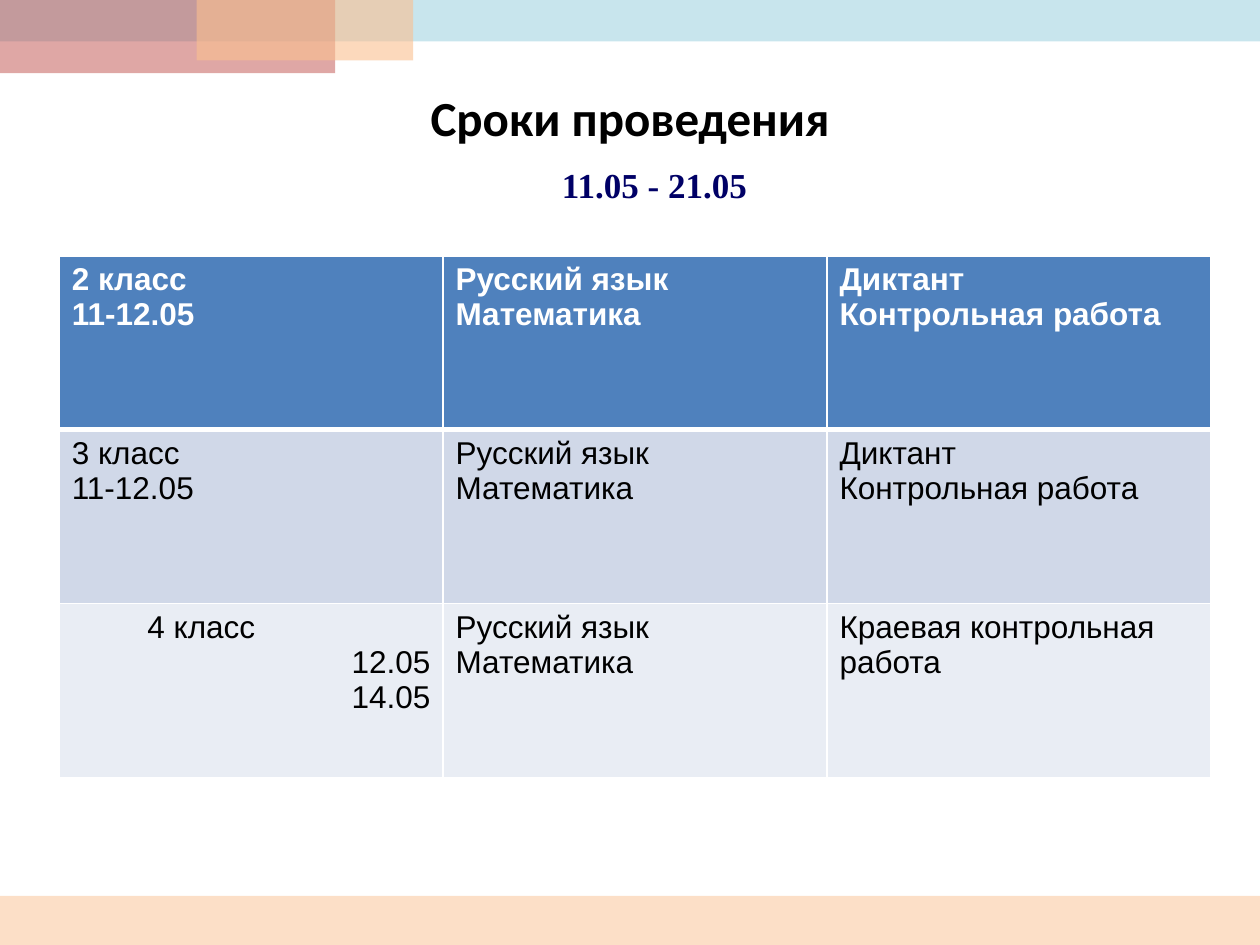
from lxml.etree import SubElement
from pptx import Presentation
from pptx.dml.color import RGBColor
from pptx.enum.shapes import MSO_SHAPE as Shape
from pptx.enum.text import MSO_ANCHOR as Anchor, PP_ALIGN as Align
from pptx.oxml.ns import qn
from pptx.util import Inches, Pt

COLORS = {
    "peach": "FAC090", "aqua": "93CDDD", "red": "C0504D",
    "black": "000000", "navy": "000066", "white": "FFFFFF",
    "header": "4F81BD", "odd": "D0D8E8", "even": "E9EDF4",
}
COLUMNS, ROWS = 100, 75

SUBJECTS = ["Русский язык", "Математика"]
WORKS = ["Диктант", "Контрольная работа"]
SCHEDULE = [
    [["2 класс", "11-12.05"], SUBJECTS, WORKS],
    [["3 класс", "11-12.05"], SUBJECTS, WORKS],
    [["4 класс", "12.05", "14.05"], SUBJECTS, ["Краевая контрольная работа"]],
]


def rgb(name):
    return RGBColor.from_string(COLORS[name])


class ScheduleSlide:
    """Draws on one slide; boxes are (left, top, width, height) in grid units."""

    def __init__(self, deck):
        self.slide = deck.slides.add_slide(deck.slide_layouts[6])
        self.column = deck.slide_width / COLUMNS
        self.row = deck.slide_height / ROWS

    def place(self, left, top, width, height):
        return (round(left * self.column), round(top * self.row),
                round(width * self.column), round(height * self.row))

    def style(self, paragraph, font, size, color, bold=False, align=Align.LEFT):
        paragraph.alignment = align
        paragraph.font.name = font
        paragraph.font.size = Pt(size)
        paragraph.font.bold = bold
        paragraph.font.color.rgb = rgb(color)

    def band(self, box, color, opacity):
        band = self.slide.shapes.add_shape(Shape.RECTANGLE, *self.place(*box))
        band.shadow.inherit = False
        band.line.fill.background()
        band.fill.solid()
        band.fill.fore_color.rgb = rgb(color)
        tint = band.fill._xPr.find(".//" + qn("a:srgbClr"))
        SubElement(tint, qn("a:alpha"), val=str(opacity * 1000))

    def heading(self, box, text, font, size, color, anchor, space=0):
        frame = self.slide.shapes.add_textbox(*self.place(*box)).text_frame
        frame.word_wrap = True
        frame.vertical_anchor = anchor
        paragraph = frame.paragraphs[0]
        paragraph.text = text
        paragraph.space_before = Pt(space)
        self.style(paragraph, font, size, color, bold=True, align=Align.CENTER)

    def border(self, cell, widths):
        """Adds white cell borders; widths are points by side."""
        properties = cell._tc.get_or_add_tcPr()
        for index, (side, width) in enumerate(widths.items()):
            line = SubElement(properties, qn("a:ln" + side), w=str(Pt(width)))
            fill = SubElement(line, qn("a:solidFill"))
            SubElement(fill, qn("a:srgbClr"), val=COLORS["white"])
            properties.insert(index, line)

    def table(self, box, content):
        table = self.slide.shapes.add_table(
            len(content), len(content[0]), *self.place(*box)).table
        for r, entries in enumerate(content):
            header = r == 0
            fill = "header" if header else "odd" if r % 2 else "even"
            for c, lines in enumerate(entries):
                cell = table.cell(r, c)
                cell.fill.solid()
                cell.fill.fore_color.rgb = rgb(fill)
                self.border(cell, {"L": 1, "R": 1, "T": 3 if r == 1 else 1,
                                   "B": 3 if header else 1})
                cell.text = "\n".join(lines)
                for paragraph in cell.text_frame.paragraphs:
                    self.style(paragraph, "Arial", 18,
                               "white" if header else "black", bold=header)
        return table

    def stagger(self, cell, indent):
        """Indents the first line of a cell and sets the others to the right."""
        first, *others = cell.text_frame.paragraphs
        first._p.get_or_add_pPr().set("marL", str(round(indent * self.column)))
        for paragraph in others:
            paragraph.alignment = Align.RIGHT


def main():
    deck = Presentation()
    deck.slide_width, deck.slide_height = Inches(10), Inches(7.5)
    page = ScheduleSlide(deck)

    page.band((0, 71.1, COLUMNS, 3.9), "peach", 50)
    page.band((0, 0, COLUMNS, 3.3), "aqua", 50)
    page.band((0, 0, 26.6, 5.8), "red", 50)
    page.band((15.6, 0, 17.2, 4.8), "peach", 60)

    page.heading((5, 3, 90, 12.5), "Сроки проведения",
                 "Calibri", 28, "black", Anchor.MIDDLE)
    page.heading((7.8, 12.5, 88.3, 5), "11.05 - 21.05",
                 "Times New Roman", 20, "navy", Anchor.TOP, space=4)

    schedule = page.table((4.7, 20.3, 91.4, 41.4), SCHEDULE)
    page.stagger(schedule.cell(2, 0), 6)

    deck.save("out.pptx")


if __name__ == "__main__":
    main()
